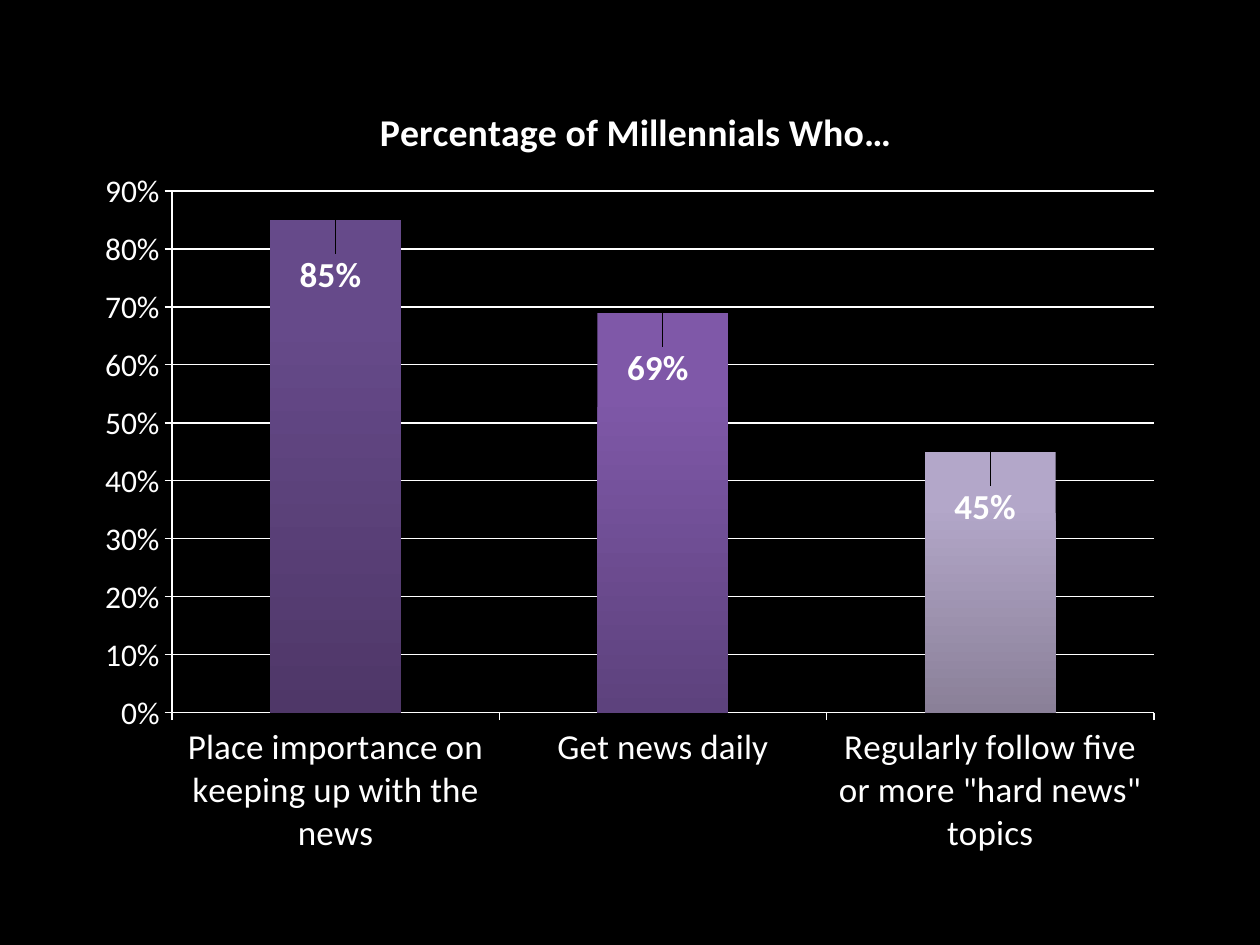
from lxml import etree
from pptx import Presentation
from pptx.chart.data import CategoryChartData
from pptx.dml.color import RGBColor
from pptx.enum.chart import XL_CHART_TYPE, XL_LABEL_POSITION, XL_TICK_MARK
from pptx.oxml.ns import qn
from pptx.util import Pt

COLUMNS = XL_CHART_TYPE.COLUMN_CLUSTERED
INSIDE_END = XL_LABEL_POSITION.INSIDE_END
TICK_OUTSIDE = XL_TICK_MARK.OUTSIDE

# Content
TITLE = "Percentage of Millennials Who…"
# category, value, top colour, bottom colour
BARS = [
    ("Place importance on keeping up with the news", 0.85, "664A8A", "4F3768"),
    ("Get news daily", 0.69, "7F58A8", "5D427D"),
    ('Regularly follow five or more "hard news" topics', 0.45, "B3A7C9", "8A8098"),
]
FONT, WHITE, BLACK = "Calibri", "FFFFFF", "000000"

# Geometry in px: left, top, width, height
PX = 914400 // 126
PAGE = (1260, 945)
CHART = (84, 63, 1092, 809)
PLOT = (172, 191, 982, 522)
TITLE_CORNER = (373, 98)
LABEL_SHIFT = (-5, 29)


def color(value):
    return RGBColor.from_string(value)


def set_font(font, size, bold=False):
    formats = {"name": FONT, "size": Pt(size), "bold": bold}
    for name, value in formats.items():
        setattr(font, name, value)
    font.color.rgb = color(WHITE)


def set_line(line):
    line.color.rgb = color(WHITE)
    line.width = Pt(0.75)


def layout(values):
    """Return a manual chart layout holding the given element values."""
    element = etree.Element(qn("c:layout"))
    manual = etree.SubElement(element, qn("c:manualLayout"))
    for name, value in values.items():
        etree.SubElement(manual, qn(f"c:{name}")).set("val", str(value))
    return element


def place(parent, values, index):
    for old in parent.findall(qn("c:layout")):
        parent.remove(old)
    parent.insert(index, layout(values))


def fraction(px, axis):
    return round(px / CHART[2 + axis], 4)


def corner(left, top):
    return {"xMode": "edge", "yMode": "edge",
            "x": fraction(left - CHART[0], 0), "y": fraction(top - CHART[1], 1)}


deck = Presentation()
deck.slide_width, deck.slide_height = (side * PX for side in PAGE)
page = deck.slides.add_slide(deck.slide_layouts[6])
page.background.fill.solid()
page.background.fill.fore_color.rgb = color(BLACK)

# Chart
data = CategoryChartData(number_format="0%")
data.categories = [bar[0] for bar in BARS]
data.add_series(TITLE, [bar[1] for bar in BARS])
chart = page.shapes.add_chart(COLUMNS, *(side * PX for side in CHART), data).chart
chart.has_legend = False
set_font(chart.font, 18)

# Title
chart.has_title = True
heading = chart.chart_title
heading.include_in_layout = False
heading.text_frame.text = TITLE
set_font(heading.text_frame.paragraphs[0].runs[0].font, 21.6, True)
place(heading._element, corner(*TITLE_CORNER), 1)

# Axes
for axis, size in ((chart.category_axis, 20), (chart.value_axis, 18)):
    axis.major_tick_mark = TICK_OUTSIDE
    set_font(axis.tick_labels.font, size)
    set_line(axis.format.line)
value_axis = chart.value_axis
value_axis.minimum_scale, value_axis.maximum_scale, value_axis.major_unit = 0, 0.9, 0.1
value_axis.tick_labels.number_format = "0%"
value_axis.tick_labels.number_format_is_linked = False
set_line(value_axis.major_gridlines.format.line)

# Plot area
plot = chart.plots[0]
plot.gap_width = 150
plot.vary_by_categories = False
area = chart._chartSpace.find(".//" + qn("c:plotArea"))
place(area, {"layoutTarget": "inner", **corner(*PLOT[:2]),
             "w": fraction(PLOT[2], 0), "h": fraction(PLOT[3], 1)}, 0)

# Bars and their labels
series = plot.series[0]
for index, (_, _, top, bottom) in enumerate(BARS):
    point = series.points[index]
    fill = point.format.fill
    fill.gradient()
    fill.gradient_angle = 270
    for stop, position, shade in zip(fill.gradient_stops, (0.2, 1), (top, bottom)):
        stop.position = position
        stop.color.rgb = color(shade)
    set_font(point.data_label.font, 20, True)
    point.data_label.position = INSIDE_END
shift = {name: fraction(LABEL_SHIFT[i], i) for i, name in enumerate("xy")}
for label in series._element.iter(qn("c:dLbl")):
    place(label, shift, 1)

deck.save("out.pptx")
